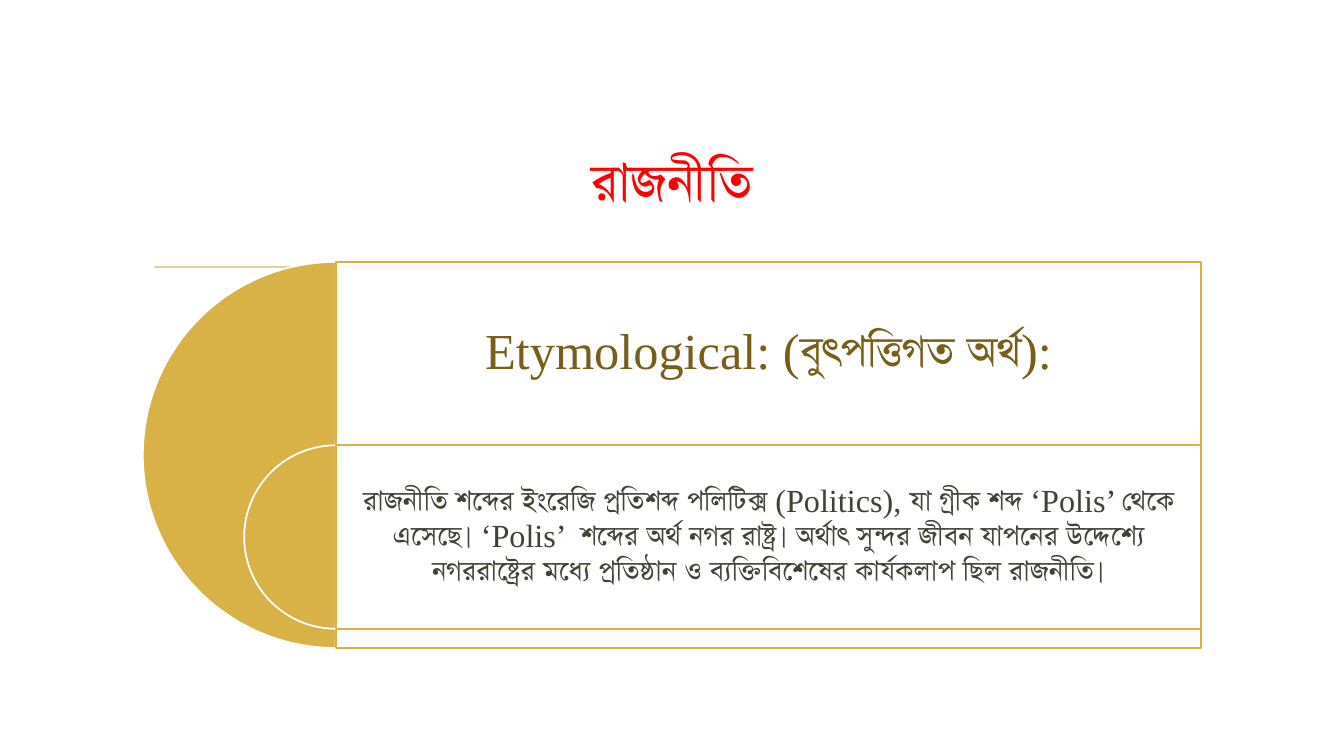
import dataclasses

import lxml.etree
import pptx
import pptx.dml.color
import pptx.enum.shapes
import pptx.enum.text
import pptx.oxml.ns
import pptx.util

Cm = pptx.util.Cm
Pt = pptx.util.Pt
qn = pptx.oxml.ns.qn
SHAPE = pptx.enum.shapes.MSO_SHAPE


@dataclasses.dataclass(frozen=True)
class Theme:
    font: str = "Times New Roman"
    title: str = "FF0000"
    heading: str = "775E19"
    body: str = "3D4433"
    gold: str = "D9B247"
    rule: str = "E8D191"
    white: str = "FFFFFF"
    title_size: int = 44
    heading_size: int = 36
    body_size: int = 23
    line: float = 1.25
    panel_alpha: int = 90


THEME = Theme()
HEADING = "Etymological: (বুৎপত্তিগত অর্থ):"
BODY = (
    "রাজনীতি শব্দের ইংরেজি প্রতিশব্দ পলিটিক্স (Politics), যা গ্রীক শব্দ ‘Polis’ থেকে "
    "এসেছে। ‘Polis’  শব্দের অর্থ নগর রাষ্ট্র। অর্থাৎ সুন্দর জীবন যাপনের উদ্দেশ্যে "
    "নগররাষ্ট্রের মধ্যে প্রতিষ্ঠান ও ব্যক্তিবিশেষের কার্যকলাপ ছিল রাজনীতি।"
)


def rgb(color):
    return pptx.dml.color.RGBColor.from_string(color)


def write_text(tf, text, size, color, inset, spacing):
    tf.word_wrap = True
    tf.auto_size = pptx.enum.text.MSO_AUTO_SIZE.NONE
    tf.vertical_anchor = pptx.enum.text.MSO_ANCHOR.MIDDLE
    tf.margin_left = tf.margin_right = tf.margin_top = tf.margin_bottom = Cm(inset)
    p = tf.paragraphs[0]
    p.alignment = pptx.enum.text.PP_ALIGN.CENTER
    p.line_spacing = spacing
    r = p.add_run()
    r.text = text
    r.font.size = Pt(size)
    r.font.color.rgb = rgb(color)
    r.font.name = THEME.font
    cs = lxml.etree.SubElement(r.font._element, qn("a:cs"))
    cs.set("typeface", THEME.font)


def add_box(shapes, kind, left, top, width, height, fill, line):
    sp = shapes.add_shape(kind, Cm(left), Cm(top), Cm(width), Cm(height))
    sp.shadow.inherit = False
    sp.fill.solid()
    sp.fill.fore_color.rgb = rgb(fill)
    sp.line.color.rgb = rgb(line)
    sp.line.width = Pt(THEME.line)
    return sp


def add_title(slide, left, top, width, height):
    sp = slide.shapes.title
    sp.left, sp.top, sp.width, sp.height = Cm(left), Cm(top), Cm(width), Cm(height)
    write_text(sp.text_frame, "রাজনীতি", THEME.title_size, THEME.title, 0.25, 1.0)


def add_rule(slide, left, top, width):
    sp = slide.shapes.add_connector(
        pptx.enum.shapes.MSO_CONNECTOR.STRAIGHT,
        Cm(left), Cm(top), Cm(left + width), Cm(top))
    sp.line.color.rgb = rgb(THEME.rule)
    sp.line.width = Pt(THEME.line)
    lxml.etree.SubElement(sp._element.spPr, qn("a:effectLst"))


def add_level(shapes, left, top, width, height, text_height, text, size, color, inset):
    pie = add_box(shapes, SHAPE.PIE, left - height / 2, top, height, height,
                  THEME.gold, THEME.white)
    pie.adjustments[0], pie.adjustments[1] = 54, 162
    panel = add_box(shapes, SHAPE.RECTANGLE, left, top, width, height,
                    THEME.white, THEME.gold)
    clr = panel._element.spPr.find(qn("a:solidFill"))[0]
    alpha = lxml.etree.SubElement(clr, qn("a:alpha"))
    alpha.set("val", str(THEME.panel_alpha * 1000))
    sp = shapes.add_textbox(Cm(left), Cm(top), Cm(width), Cm(text_height))
    write_text(sp.text_frame, text, size, color, inset, 0.9)


def add_diagram(slide, left, top, width, height):
    shapes = slide.shapes.add_group_shape().shapes
    row = height * 0.475
    panel_left = left + height / 2
    panel_width = width - height / 2
    add_level(shapes, panel_left, top, panel_width, height, row,
              HEADING, THEME.heading_size, THEME.heading, 0.38)
    add_level(shapes, panel_left, top + row, panel_width, row, row,
              BODY, THEME.body_size, THEME.body, 0.25)


def main():
    prs = pptx.Presentation()
    prs.slide_width, prs.slide_height = Cm(33.87), Cm(19.05)
    slide = prs.slides.add_slide(prs.slide_layouts[5])
    add_title(slide, 3.6, 2.72, 26.67, 3.63)
    add_rule(slide, 3.89, 6.73, 26.11)
    add_diagram(slide, 3.6, 6.6, 26.67, 9.73)
    prs.save("out.pptx")


if __name__ == "__main__":
    main()
